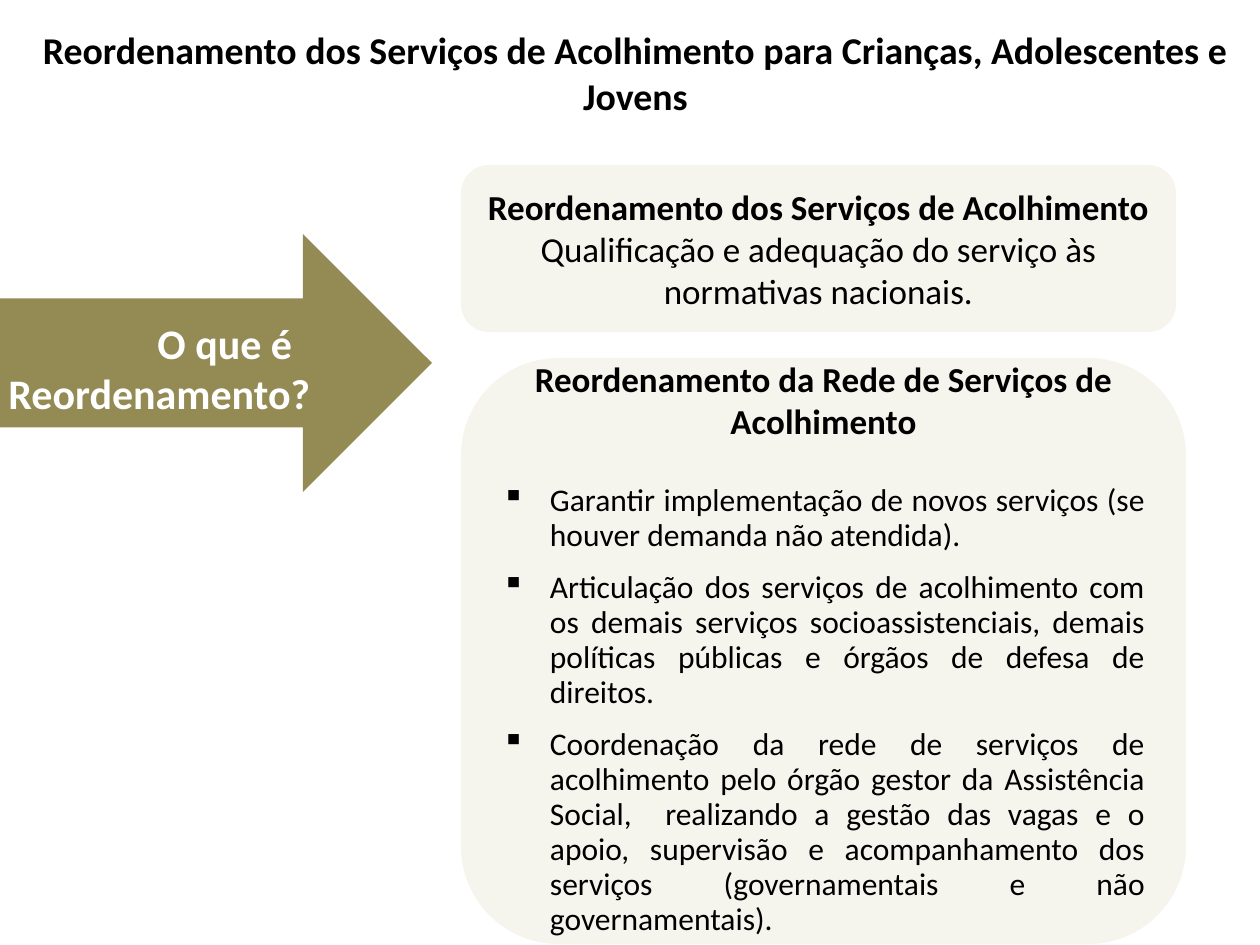
"""Builds the slide that explains the reordering of foster care services."""
from dataclasses import dataclass

from lxml import etree
from pptx import Presentation
from pptx.dml.color import RGBColor
from pptx.enum.shapes import MSO_SHAPE
from pptx.enum.text import MSO_ANCHOR, PP_ALIGN
from pptx.oxml.ns import qn
from pptx.util import Emu, Pt

ROUNDED, ARROW = MSO_SHAPE.ROUNDED_RECTANGLE, MSO_SHAPE.RIGHT_ARROW
TOP, MIDDLE = MSO_ANCHOR.TOP, MSO_ANCHOR.MIDDLE
LEFT, CENTER, JUSTIFY = PP_ALIGN.LEFT, PP_ALIGN.CENTER, PP_ALIGN.JUSTIFY
EMU_PER_PX = 914400 / 126


@dataclass(frozen=True)
class Theme:
    font: str = "Calibri"
    ink: str = "000000"
    light: str = "FFFFFF"
    panel: str = "F5F4ED"
    arrow: str = "948A54"
    title_size: float = 21.6
    question_size: int = 24
    heading_size: int = 20
    bullet_size: int = 18


@dataclass(frozen=True)
class Block:
    left: int
    top: int
    width: int
    height: int
    kind: int
    fill: str


THEME = Theme()
TITLE = (25, 24, 1221, 139)
DEFINITION = Block(461, 165, 715, 167, ROUNDED, THEME.panel)
NETWORK = Block(461, 358, 725, 586, ROUNDED, THEME.panel)
QUESTION = Block(-4, 234, 436, 258, ARROW, THEME.arrow)
BULLETS = (
    "Garantir implementação de novos serviços (se houver demanda não atendida).",
    "Articulação dos serviços de acolhimento com os demais serviços "
    "socioassistenciais, demais políticas públicas e órgãos de defesa de direitos.",
    "Coordenação da rede de serviços de acolhimento pelo órgão gestor da "
    "Assistência Social,  realizando a gestão das vagas e o apoio, supervisão e "
    "acompanhamento dos serviços (governamentais e não governamentais).",
)


def px(value: int) -> Emu:
    """Turns pixels into EMU."""
    return Emu(round(value * EMU_PER_PX))


def set_frame(frame, anchor=MIDDLE, top: int = 6, bottom: int = 6) -> None:
    """Sets wrapping, anchor and vertical insets of a text frame."""
    frame.word_wrap = True
    frame.vertical_anchor = anchor
    frame.margin_top, frame.margin_bottom = px(top), px(bottom)


def draw_block(page, block: Block):
    """Draws a flat filled shape and returns its text frame."""
    box = page.shapes.add_shape(
        block.kind, px(block.left), px(block.top), px(block.width), px(block.height))
    box.shadow.inherit = False
    box.fill.solid()
    box.fill.fore_color.rgb = RGBColor.from_string(block.fill)
    box.line.fill.background()
    return box.text_frame


def write(frame, text: str, *, size: float, bold: bool = False, color: str = THEME.ink,
          align=CENTER, margin: int = 0, indent: int = 0, bullet: str = "",
          line: float | None = None, before: float = 0, after: float = 0) -> None:
    """Adds one formatted paragraph to a text frame."""
    para = frame.paragraphs[0]
    if para.runs:
        para = frame.add_paragraph()
    para.alignment = align
    para.space_before, para.space_after = Pt(before), Pt(after)
    if line:
        para.line_spacing = Pt(line)
    properties = para._p.get_or_add_pPr()
    properties.set("marL", str(px(margin)))
    properties.set("indent", str(px(indent)))
    if bullet:
        etree.SubElement(properties, qn("a:buChar")).set("char", bullet)
    span = para.add_run()
    span.text = text
    span.font.name, span.font.size, span.font.bold = THEME.font, Pt(size), bold
    span.font.color.rgb = RGBColor.from_string(color)


def main() -> None:
    """Builds and saves the deck."""
    deck = Presentation()
    deck.slide_width, deck.slide_height = px(1260), px(945)
    page = deck.slides.add_slide(deck.slide_layouts[6])

    title = page.shapes.add_textbox(*map(px, TITLE)).text_frame
    set_frame(title, TOP, top=3)
    write(title, "Reordenamento dos Serviços de Acolhimento para Crianças, "
          "Adolescentes e Jovens", size=THEME.title_size, bold=True)

    definition = draw_block(page, DEFINITION)
    set_frame(definition)
    write(definition, "Reordenamento dos Serviços de Acolhimento",
          size=THEME.heading_size, bold=True)
    write(definition, "Qualificação e adequação do serviço às normativas nacionais.",
          size=THEME.heading_size)

    network = draw_block(page, NETWORK)
    set_frame(network, bottom=13)
    write(network, "Reordenamento da Rede de Serviços de Acolhimento",
          size=THEME.heading_size, bold=True, after=20)
    for text in BULLETS:
        write(network, text, size=THEME.bullet_size, align=JUSTIFY, margin=48,
              indent=-48, bullet="▪", line=20, before=3.6, after=6)

    question = draw_block(page, QUESTION)
    set_frame(question, top=16)
    write(question, "O que é Reordenamento?", size=THEME.question_size, bold=True,
          color=THEME.light, align=LEFT, indent=149)

    deck.save("out.pptx")


if __name__ == "__main__":
    main()
